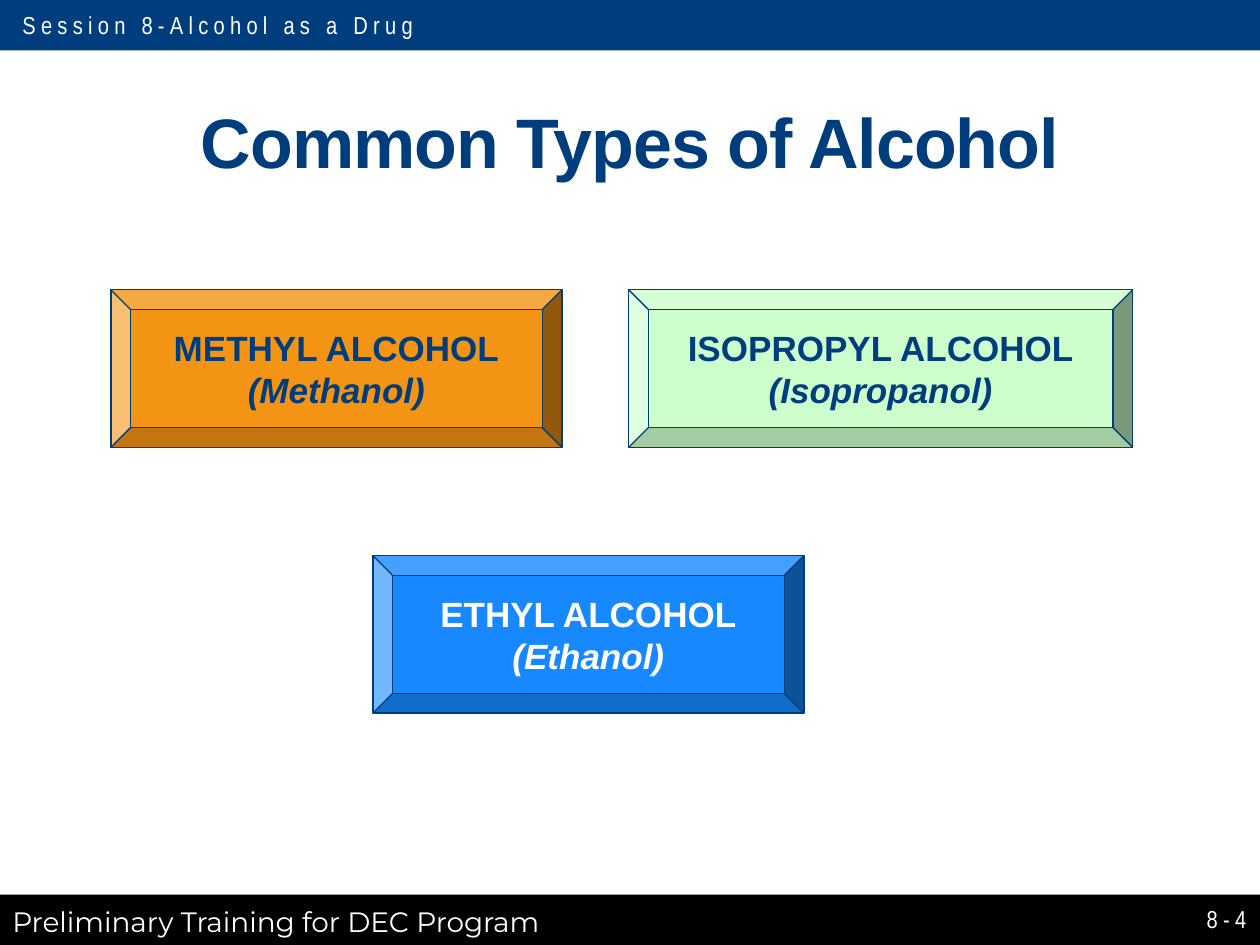
"""Build the slide on common types of alcohol."""
from dataclasses import dataclass

from pptx import Presentation
from pptx.dml.color import RGBColor
from pptx.enum.shapes import MSO_SHAPE
from pptx.enum.text import MSO_ANCHOR, MSO_AUTO_SIZE, PP_ALIGN
from pptx.util import Inches, Pt


@dataclass(frozen=True)
class Theme:
    navy: str = "003D7D"
    black: str = "000000"
    white: str = "FFFFFF"
    orange: str = "F49415"
    blue: str = "1788FF"
    mint: str = "CCFFCC"
    main_font: str = "Arial"
    narrow_font: str = "Arial Narrow"
    footer_font: str = "Montserrat"
    title_size: int = 40
    label_size: int = 20
    footer_size: int = 16
    small_size: int = 14
    outline: float = 0.75


THEME = Theme()
SLIDE_WIDTH, SLIDE_HEIGHT, BAND_HEIGHT = 10, 7.5, 0.4
BEVEL_HEIGHT = 1.25
TOP_ROW, BOTTOM_ROW = 2.3, 4.41

TITLE = "Common Types of Alcohol"
SESSION = "Session 8-Alcohol as a Drug"
PROGRAM = "Preliminary Training for DEC Program"
PAGE = "8-4"
ALCOHOLS = [
    ("METHYL ALCOHOL", "(Methanol)", 0.88, TOP_ROW, 3.58, THEME.orange, THEME.navy),
    ("ETHYL ALCOHOL", "(Ethanol)", 2.96, BOTTOM_ROW, 3.42, THEME.blue, THEME.white),
    ("ISOPROPYL ALCOHOL", "(Isopropanol)", 4.99, TOP_ROW, 4, THEME.mint, THEME.navy),
]


def write_text(shape, *lines, font=THEME.main_font, size=THEME.small_size,
               color=THEME.white, bold=False, italic_lines=(), align=PP_ALIGN.LEFT,
               anchor=MSO_ANCHOR.TOP, wrap=True, tracking=0, line_spacing=None):
    frame = shape.text_frame
    frame.auto_size = MSO_AUTO_SIZE.NONE
    frame.word_wrap = wrap
    frame.vertical_anchor = anchor
    for index, line in enumerate(lines):
        paragraph = frame.add_paragraph() if index else frame.paragraphs[0]
        paragraph.alignment = align
        paragraph.line_spacing = line_spacing
        run = paragraph.add_run()
        run.text = line
        run.font.name = font
        run.font.size = Pt(size)
        run.font.bold = bold
        run.font.italic = index in italic_lines
        run.font.color.rgb = RGBColor.from_string(color)
        if tracking:
            run.font._element.set("spc", str(int(tracking * 100)))


def add_panel(slide, kind, box, fill, line=None):
    shape = slide.shapes.add_shape(kind, *map(Inches, box))
    shape.shadow.inherit = False
    shape.fill.solid()
    shape.fill.fore_color.rgb = RGBColor.from_string(fill)
    if line:
        shape.line.color.rgb = RGBColor.from_string(line)
        shape.line.width = Pt(THEME.outline)
    else:
        shape.line.fill.background()
    return shape


def add_label(slide, text, box, **text_format):
    write_text(slide.shapes.add_textbox(*map(Inches, box)), text, **text_format)


def add_bands(slide):
    for top, fill in ((SLIDE_HEIGHT - BAND_HEIGHT, THEME.black), (0, THEME.navy)):
        add_panel(slide, MSO_SHAPE.RECTANGLE, (0, top, SLIDE_WIDTH, BAND_HEIGHT), fill)
    add_label(slide, SESSION, (0.08, 0.03, 3.37, 0.34),
              font=THEME.narrow_font, wrap=False, tracking=3)
    add_label(slide, PROGRAM, (0, 7.13, 8, 0.37),
              font=THEME.footer_font, size=THEME.footer_size)
    add_label(slide, PAGE, (8.12, 7.09, 1.87, BAND_HEIGHT), font=THEME.narrow_font,
              align=PP_ALIGN.RIGHT, anchor=MSO_ANCHOR.MIDDLE, tracking=3)


def add_title(slide):
    title = slide.shapes.title
    title.left, title.top, title.width, title.height = map(Inches, (0.5, 0.5, 9, 1))
    write_text(title, TITLE, size=THEME.title_size, color=THEME.navy, bold=True,
               align=PP_ALIGN.CENTER, anchor=MSO_ANCHOR.BOTTOM,
               tracking=-0.5, line_spacing=0.85)


def add_alcohols(slide):
    for name, short_name, left, top, width, fill, color in ALCOHOLS:
        bevel = add_panel(slide, MSO_SHAPE.BEVEL, (left, top, width, BEVEL_HEIGHT),
                          fill, line=THEME.navy)
        write_text(bevel, name, short_name, size=THEME.label_size, color=color,
                   bold=True, italic_lines=(1,), align=PP_ALIGN.CENTER,
                   anchor=MSO_ANCHOR.MIDDLE)


def main():
    presentation = Presentation()
    presentation.slide_width = Inches(SLIDE_WIDTH)
    presentation.slide_height = Inches(SLIDE_HEIGHT)
    slide = presentation.slides.add_slide(presentation.slide_layouts[5])
    add_bands(slide)
    add_title(slide)
    add_alcohols(slide)
    presentation.save("out.pptx")


if __name__ == "__main__":
    main()
